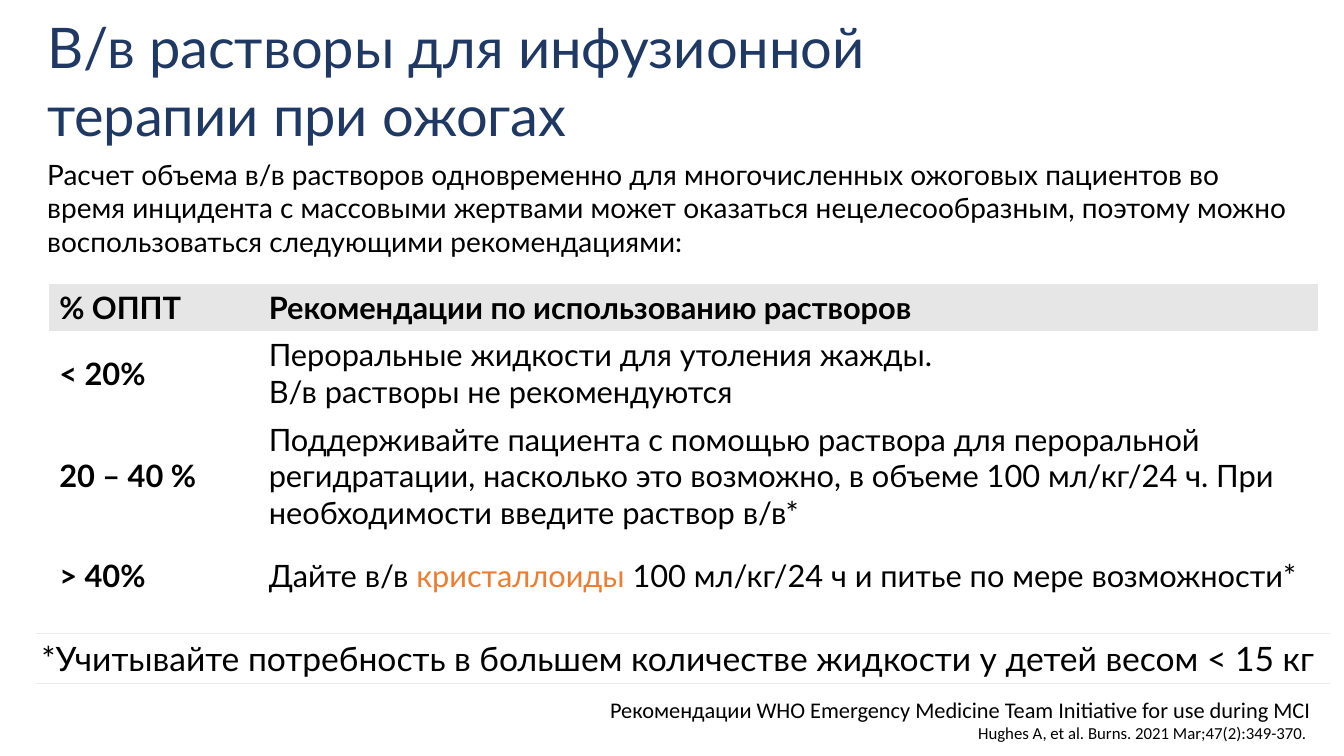
import pptx
import pptx.util
import pptx.dml.color
import pptx.enum.text
import pptx.oxml
import pptx.oxml.ns

Cm, Pt = pptx.util.Cm, pptx.util.Pt
RGB = pptx.dml.color.RGBColor
ALIGN = pptx.enum.text.PP_ALIGN
MID = pptx.enum.text.MSO_ANCHOR.MIDDLE
NAVY = RGB(0x1F, 0x38, 0x64)
BLACK = RGB(0, 0, 0)
ORANGE = RGB(0xED, 0x7D, 0x31)
GREY = RGB(0xE7, 0xE6, 0xE6)
RULE = RGB(0xEB, 0xEB, 0xEB)
PLAIN = "{2D5ABB26-0587-4C30-8999-92F81FD0307C}"  # no style, no grid


def write(par, text, size=22, font="Lato", color=BLACK, bold=False, align=ALIGN.LEFT):
    par.alignment = align
    run = par.add_run()
    run.text = text
    run.font.size = Pt(size)
    run.font.name = font
    run.font.color.rgb = color
    run.font.bold = bold


def add_grid(left, top, cols, rows):
    shape = slide.shapes.add_table(len(rows), len(cols), Cm(left), Cm(top),
                                   Cm(sum(cols)), Cm(sum(rows)))
    grid = shape.table
    grid.first_row = grid.horz_banding = False
    grid._tbl.tblPr.find(pptx.oxml.ns.qn("a:tableStyleId")).text = PLAIN
    for col, width in zip(grid.columns, cols):
        col.width = Cm(width)
    for row, height in zip(grid.rows, rows):
        row.height = Cm(height)
    for cell in grid.iter_cells():
        cell.fill.background()
        cell.vertical_anchor = MID
    return grid


deck = pptx.Presentation()
deck.slide_width, deck.slide_height = Cm(33.87), Cm(19.05)
slide = deck.slides.add_slide(deck.slide_layouts[6])

# Title, lead text and source
frames = []
for left, top, width, height in ((0.94, 0.18, 26.19, 3.68),
                                 (0.94, 3.84, 31.98, 2.82),
                                 (12.93, 17.42, 20.35, 1.45)):
    box = slide.shapes.add_textbox(Cm(left), Cm(top), Cm(width), Cm(height))
    box.text_frame.word_wrap = True
    frames.append(box.text_frame)
title, lead, source = frames

title.vertical_anchor = MID
write(title.paragraphs[0], "В/в растворы для инфузионной терапии при ожогах",
      size=40, color=NAVY)
write(lead.paragraphs[0],
      "Расчет объема в/в растворов одновременно для многочисленных ожоговых "
      "пациентов во время инцидента с массовыми жертвами может оказаться "
      "нецелесообразным, поэтому можно воспользоваться следующими рекомендациями:",
      size=20)
write(source.paragraphs[0],
      "Рекомендации WHO Emergency Medicine Team Initiative for use during MCI",
      size=16, font="Calibri", align=ALIGN.RIGHT)
write(source.add_paragraph(), "Hughes A, et al. Burns. 2021 Mar;47(2):349-370. ",
      size=12, font="Calibri", align=ALIGN.RIGHT)

# Fluid table: burn area, then paragraphs of (text, color) runs
advice = [
    ("% ОППТ", [[("Рекомендации по использованию растворов", BLACK)]]),
    ("< 20%", [[("Пероральные жидкости для утоления жажды.", BLACK)],
               [("В/в растворы не рекомендуются", BLACK)]]),
    ("20 – 40 %", [[("Поддерживайте пациента с помощью раствора для пероральной "
                     "регидратации, насколько это возможно, в объеме 100 мл/кг/24 ч. "
                     "При необходимости введите раствор в/в*", BLACK)]]),
    ("> 40%", [[("Дайте в/в ", BLACK), ("кристаллоиды ", ORANGE),
                ("100 мл/кг/24 ч и питье по мере возможности*", BLACK)]]),
]
fluids = add_grid(1.24, 7.16, (5.28, 26.7), (1.19, 2.12, 3.05, 1.98))
for row, (area, pars) in enumerate(advice):
    write(fluids.cell(row, 0).text_frame.paragraphs[0], area, bold=True)
    frame = fluids.cell(row, 1).text_frame
    for num, runs in enumerate(pars):
        par = frame.add_paragraph() if num else frame.paragraphs[0]
        for text, color in runs:
            write(par, text, color=color, bold=row == 0)
for col in range(2):
    head = fluids.cell(0, col)
    head.fill.solid()
    head.fill.fore_color.rgb = GREY

# Footnote with a rule above and below
note = add_grid(0.91, 15.95, (32.61,), (1.27,)).cell(0, 0)
note.margin_left = note.margin_right = Cm(0.13)
write(note.text_frame.paragraphs[0],
      "*Учитывайте потребность в большем количестве жидкости у детей весом < 15 кг",
      size=24)
props = note._tc.get_or_add_tcPr()
for num, side in enumerate(("lnT", "lnB")):
    props.insert(num, pptx.oxml.parse_xml(
        f'<a:{side} {pptx.oxml.ns.nsdecls("a")} w="{Pt(0.75)}"><a:solidFill>'
        f'<a:srgbClr val="{RULE}"/></a:solidFill></a:{side}>'))

deck.save("out.pptx")
